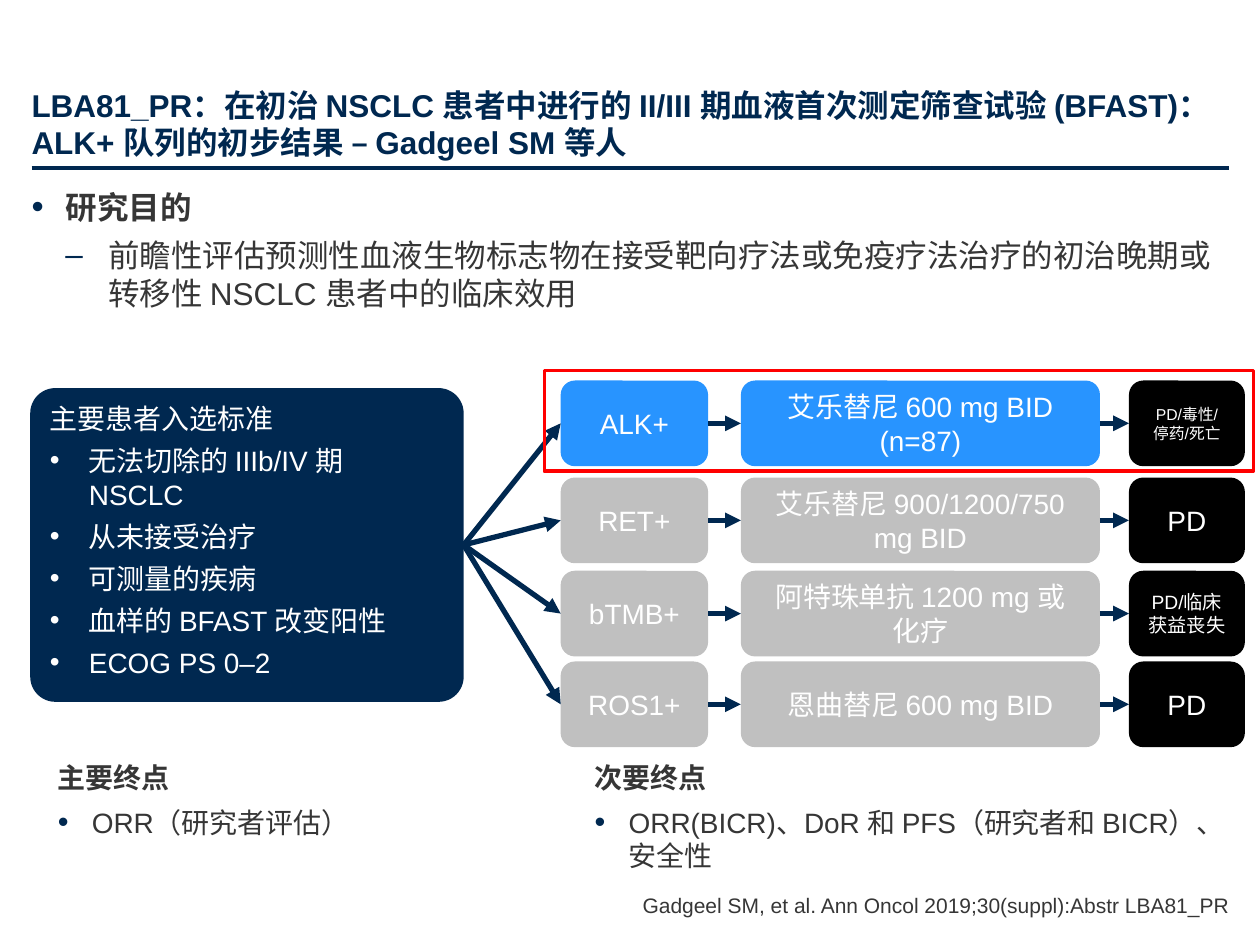
from lxml import etree
from pptx import Presentation
from pptx import util as u
from pptx.dml.color import RGBColor
from pptx.enum import shapes, text
from pptx.oxml.ns import qn

COLORS = {"navy": "002850", "blue": "2894FF", "gray": "C0C0C0", "black": "000000",
          "white": "FFFFFF", "ink": "363636", "red": "FF0000"}
FONT = "Arial"
LEFT, CENTER, RIGHT = text.PP_ALIGN.LEFT, text.PP_ALIGN.CENTER, text.PP_ALIGN.RIGHT
TOP, MIDDLE, BOTTOM = text.MSO_ANCHOR.TOP, text.MSO_ANCHOR.MIDDLE, text.MSO_ANCHOR.BOTTOM
MARGIN, CONTENT_WIDTH = 0.25, 9.5
COLUMNS = {"marker": (4.45, 1.17), "therapy": (5.88, 2.85), "end": (8.96, 0.92)}
ROW_TOPS, ROW_HEIGHT = (3.02, 3.79, 4.53, 5.25), 0.68

ARMS = [
    ("ALK+", ["艾乐替尼 600 mg BID\v(n=87)"], ["PD/毒性/", "停药/死亡"], 9, "blue"),
    ("RET+", ["艾乐替尼 900/1200/750 mg BID"], ["PD"], 16, "gray"),
    ("bTMB+", ["阿特珠单抗 1200 mg 或", "化疗"], ["PD/临床获益丧失"], 11, "gray"),
    ("ROS1+", ["恩曲替尼 600 mg BID"], ["PD"], 16, "gray"),
]
CRITERIA = ["无法切除的 IIIb/IV 期 NSCLC", "从未接受治疗", "可测量的疾病",
            "血样的 BFAST 改变阳性", "ECOG PS 0–2"]


def rgb(name):
    return RGBColor.from_string(COLORS[name])


def place(shape, left, top, width, height):
    shape.left, shape.top = u.Inches(left), u.Inches(top)
    shape.width, shape.height = u.Inches(width), u.Inches(height)


def set_frame(shape, insets, anchor=TOP, wrap=True):
    frame = shape.text_frame
    frame.auto_size = text.MSO_AUTO_SIZE.NONE
    frame.word_wrap = wrap
    frame.vertical_anchor = anchor
    frame.margin_left = frame.margin_right = u.Inches(insets[0])
    frame.margin_top = frame.margin_bottom = u.Inches(insets[1])
    return frame


def set_bullet(paragraph, character, indent, hanging, color, percent=100):
    properties = paragraph._p.get_or_add_pPr()
    properties.set("marL", str(u.Inches(indent)))
    properties.set("indent", str(-u.Inches(hanging)))
    bullet_color = etree.SubElement(properties, qn("a:buClr"))
    etree.SubElement(bullet_color, qn("a:srgbClr"), val=COLORS[color])
    etree.SubElement(properties, qn("a:buSzPct"), val=str(percent * 1000))
    etree.SubElement(properties, qn("a:buFont"), typeface=FONT)
    etree.SubElement(properties, qn("a:buChar"), char=character)


def add_paragraph(frame, content, size, color, bold=False, align=LEFT, after=0, level=0):
    first = frame.paragraphs[0]
    paragraph = frame.add_paragraph() if first.runs else first
    paragraph.alignment = align
    paragraph.level = level
    paragraph.space_before, paragraph.space_after = u.Pt(0), u.Pt(after)
    for index, line in enumerate(content.split("\v")):
        if index:
            paragraph.add_line_break()
        run = paragraph.add_run()
        run.text = line
        run.font.name, run.font.size, run.font.bold = FONT, u.Pt(size), bold
        run.font.color.rgb = rgb(color)
    return paragraph


def add_box(slide, box, fill, kind=shapes.MSO_SHAPE.ROUNDED_RECTANGLE):
    shape = slide.shapes.add_shape(kind, *(u.Inches(value) for value in box))
    shape.shadow.inherit = False
    shape.line.fill.background()
    if fill:
        shape.fill.solid()
        shape.fill.fore_color.rgb = rgb(fill)
    else:
        shape.fill.background()
    return shape


def add_label_box(slide, column, top, lines, size, fill):
    left, width = COLUMNS[column]
    shape = add_box(slide, (left, top, width, ROW_HEIGHT), fill)
    frame = set_frame(shape, (0.1, 0), MIDDLE)
    for line in lines:
        add_paragraph(frame, line, size, "white", align=CENTER)
    return shape


def add_line(slide, start, end, width):
    points = [u.Inches(value) for value in (*start, *end)]
    line = slide.shapes.add_connector(shapes.MSO_CONNECTOR.STRAIGHT, *points)
    line.line.color.rgb = rgb("navy")
    line.line.width = u.Pt(width)
    etree.SubElement(line._element.spPr, qn("a:effectLst"))
    return line


def add_arrow(slide, source, target):
    arrow = add_line(slide, (0, 0), (1, 1), 3)
    arrow.begin_connect(source, 3)
    arrow.end_connect(target, 1)
    etree.SubElement(arrow.line._get_or_add_ln(), qn("a:tailEnd"), type="triangle")


def add_text_box(slide, box, insets, anchor=TOP, wrap=True):
    shape = slide.shapes.add_textbox(*(u.Inches(value) for value in box))
    return set_frame(shape, insets, anchor, wrap)


def add_endpoint(slide, left, width, heading, item):
    frame = add_text_box(slide, (left, 5.99, width, 1.02), (0, 0.05))
    add_paragraph(frame, heading, 16, "ink", bold=True, after=6)
    paragraph = add_paragraph(frame, item, 16, "ink", after=6)
    set_bullet(paragraph, "•", 0.27, 0.27, "navy", 110)


def fill_placeholders(slide):
    title, body = slide.shapes.title, slide.placeholders[1]
    place(title, MARGIN, 0.25, CONTENT_WIDTH, 1.03)
    frame = set_frame(title, (0, 0.05), BOTTOM)
    frame.margin_bottom = 0
    add_paragraph(frame, "LBA81_PR：在初治 NSCLC 患者中进行的 II/III 期血液首次测定筛查试验 "
                  "(BFAST)：ALK+ 队列的初步结果 – Gadgeel SM 等人", 18, "navy", bold=True)
    place(body, MARGIN, 1.44, CONTENT_WIDTH, 5.81)
    frame = set_frame(body, (0, 0.05))
    aim = add_paragraph(frame, "研究目的", 18, "ink", bold=True, after=6)
    set_bullet(aim, "•", 0.27, 0.27, "navy", 110)
    detail = add_paragraph(frame, "前瞻性评估预测性血液生物标志物在接受靶向疗法或免疫疗法治疗的初治晚期或"
                           "转移性 NSCLC 患者中的临床效用", 18, "ink", after=6, level=1)
    set_bullet(detail, "–", 0.61, 0.34, "navy")


def add_criteria(slide):
    shape = add_box(slide, (0.24, 3.08, 3.44, 2.49), "navy")
    shape.adjustments[0] = 0.08
    frame = set_frame(shape, (0.1, 0.05))
    add_paragraph(frame, "主要患者入选标准", 16, "white", after=4.8)
    for criterion in CRITERIA:
        paragraph = add_paragraph(frame, criterion, 16, "white", after=4.8)
        set_bullet(paragraph, "•", 0.31, 0.31, "white")
    return shape


def add_arm(slide, criteria, top, arm):
    marker_name, therapy_lines, end_lines, end_size, fill = arm
    marker = add_label_box(slide, "marker", top, [marker_name], 16, fill)
    therapy = add_label_box(slide, "therapy", top, therapy_lines, 16, fill)
    end = add_label_box(slide, "end", top, end_lines, end_size, "black")
    for source, target in ((criteria, marker), (marker, therapy), (therapy, end)):
        add_arrow(slide, source, target)


def add_highlight(slide):
    frame = add_box(slide, (4.32, 2.94, 5.63, 0.8), None, shapes.MSO_SHAPE.RECTANGLE)
    frame.line.color.rgb = rgb("red")
    frame.line.width = u.Pt(2)


def main():
    presentation = Presentation()
    presentation.slide_width, presentation.slide_height = u.Inches(10), u.Inches(7.5)
    slide = presentation.slides.add_slide(presentation.slide_layouts[1])
    fill_placeholders(slide)
    add_line(slide, (MARGIN, 1.33), (MARGIN + CONTENT_WIDTH, 1.33), 2.25)
    citation = add_text_box(slide, (4.92, 7.08, 4.84, 0.2), (0, 0), BOTTOM, wrap=False)
    add_paragraph(citation, "Gadgeel SM, et al. Ann Oncol 2019;30(suppl):Abstr LBA81_PR",
                  12, "ink", align=RIGHT)
    criteria = add_criteria(slide)
    add_endpoint(slide, 0.46, 4.67, "主要终点", "ORR（研究者评估）")
    add_endpoint(slide, 4.72, 5.03, "次要终点", "ORR(BICR)、DoR 和 PFS（研究者和 BICR）、安全性")
    for top, arm in zip(ROW_TOPS, ARMS):
        add_arm(slide, criteria, top, arm)
    add_highlight(slide)
    presentation.save("out.pptx")


if __name__ == "__main__":
    main()
